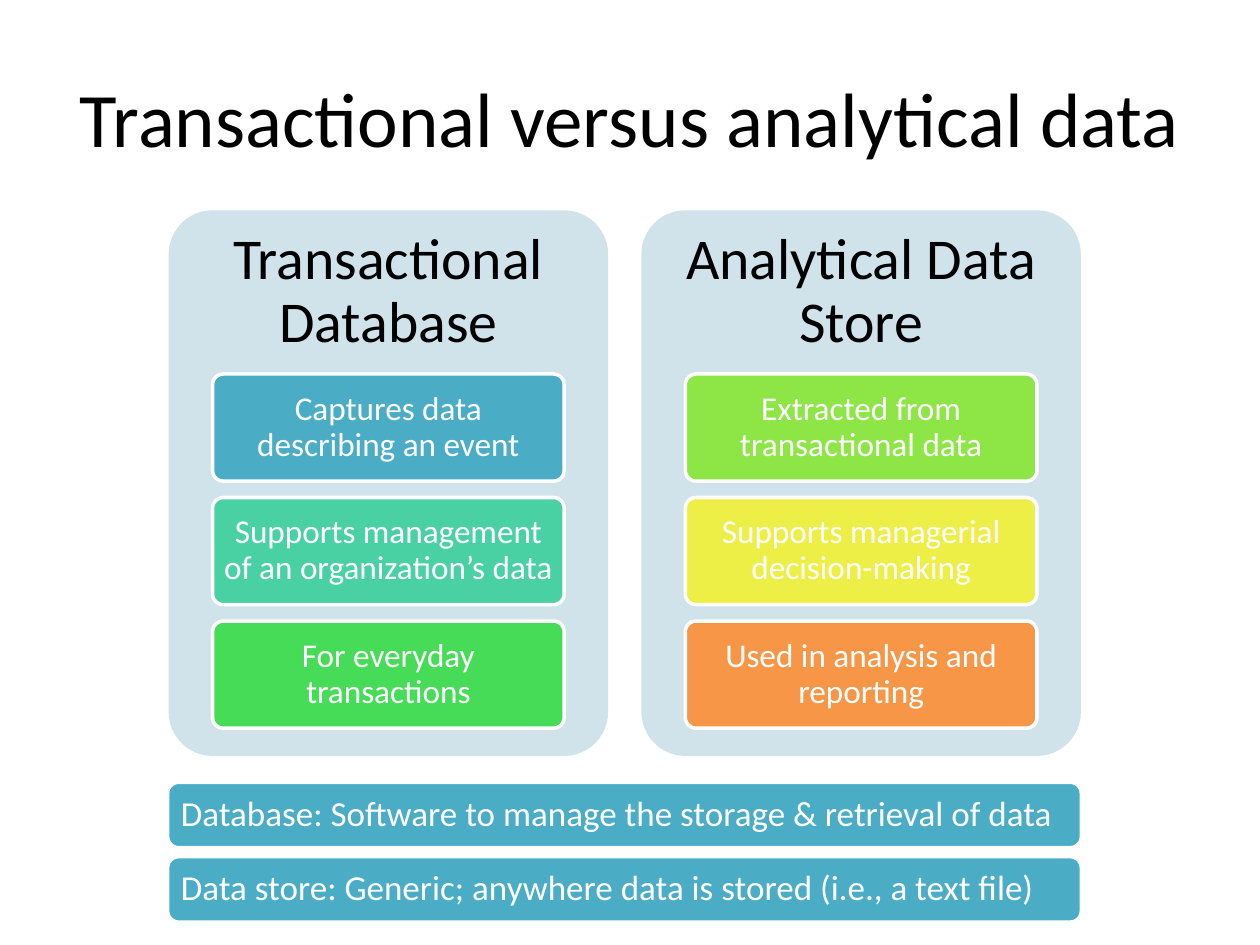
from pptx import Presentation
from pptx.dml.color import RGBColor
from pptx.enum import shapes, text
from pptx.util import Cm, Pt

WHITE, BLACK, PANEL, TEAL = "FFFFFF", "000000", "D0E3EA", "4BACC6"

COLUMNS = [
    ("Transactional Database", [
        ("Captures data describing an event", TEAL),
        ("Supports management of an organization’s data", "49D1A3"),
        ("For everyday transactions", "47DC57"),
    ]),
    ("Analytical Data Store", [
        ("Extracted from transactional data", "8DE646"),
        ("Supports managerial decision-making", "EEEF46"),
        ("Used in analysis and reporting", "F79646"),
    ]),
]
DEFINITIONS = [
    "Database: Software to manage the storage & retrieval of data",
    "Data store: Generic; anywhere data is stored (i.e., a text file)",
]


def colour(value):
    return RGBColor.from_string(value)


def write(shape, words, size, ink, align, inset=(0.25, 0.13), spacing=0.9):
    """Put one formatted, vertically centred paragraph into a shape."""
    frame = shape.text_frame
    across, down = (Cm(length) for length in inset)
    frame_format = {
        "word_wrap": True,
        "auto_size": text.MSO_AUTO_SIZE.NONE,
        "vertical_anchor": text.MSO_ANCHOR.MIDDLE,
        "margin_left": across, "margin_right": across,
        "margin_top": down, "margin_bottom": down,
    }
    for name, value in frame_format.items():
        setattr(frame, name, value)
    para = frame.paragraphs[0]
    para.alignment, para.line_spacing = align, spacing
    span = para.add_run()
    span.text = words
    for name, value in {"name": "Calibri", "size": Pt(size)}.items():
        setattr(span.font, name, value)
    span.font.color.rgb = colour(ink)


def rounded(page, box, fill, corner, outlined=True):
    """Add a rounded rectangle, with a white outline if wanted."""
    shape = page.shapes.add_shape(
        shapes.MSO_SHAPE.ROUNDED_RECTANGLE, *(Cm(length) for length in box))
    shape.adjustments[0] = corner
    shape.shadow.inherit = False
    shape.fill.solid()
    shape.fill.fore_color.rgb = colour(fill)
    if outlined:
        shape.line.color.rgb = colour(WHITE)
        shape.line.width = Pt(2)
    else:
        shape.line.fill.background()
    return shape


def add_title(page, box, words):
    title = page.shapes.title
    for name, length in zip(("left", "top", "width", "height"), box):
        setattr(title, name, Cm(length))
    write(title, words, 44, BLACK, text.PP_ALIGN.CENTER, spacing=1.0)


def add_column(page, box, heading, cards):
    """Panel with a heading and a stack of cards."""
    left, top, width, height = box
    rounded(page, box, PANEL, 0.1, outlined=False)

    # Heading takes the top 30 % of the panel
    heading_height = 0.3 * height
    label = page.shapes.add_textbox(
        Cm(left), Cm(top), Cm(width), Cm(heading_height))
    write(label, heading, 33, BLACK, text.PP_ALIGN.CENTER, (0.35, 0.35))

    # Cards span 80 % of the panel width
    card_width, card_height, pitch = 0.8 * width, 2.16, 2.49
    for row, (words, fill) in enumerate(cards):
        card_box = (left + 0.1 * width, top + heading_height + row * pitch,
                    card_width, card_height)
        card = rounded(page, card_box, fill, 0.1)
        write(card, words, 19, WHITE, text.PP_ALIGN.CENTER, (0.13, 0.1))


def add_definitions(page, box, lines):
    """Full-width bars, evenly stacked in the box."""
    left, top, width, height = box
    bar_height = 1.32
    pitch = (height - bar_height) / (len(lines) - 1)
    for row, words in enumerate(lines):
        bar = rounded(page, (left, top + row * pitch, width, bar_height),
                      TEAL, 0.17)
        write(bar, words, 20, WHITE, text.PP_ALIGN.LEFT, (0.2, 0.2))


def main():
    deck = Presentation()
    deck.slide_width, deck.slide_height = Cm(25.4), Cm(19.05)
    page = deck.slides.add_slide(deck.slide_layouts[5])

    add_title(page, (1.27, 0.76, 22.86, 3.18),
              "Transactional versus analytical data")
    for index, (heading, cards) in enumerate(COLUMNS):
        add_column(page, (3.4 + index * 9.53, 4.24, 8.86, 11), heading, cards)
    add_definitions(page, (3.38, 15.77, 18.42, 2.82), DEFINITIONS)

    deck.save("out.pptx")


if __name__ == "__main__":
    main()
